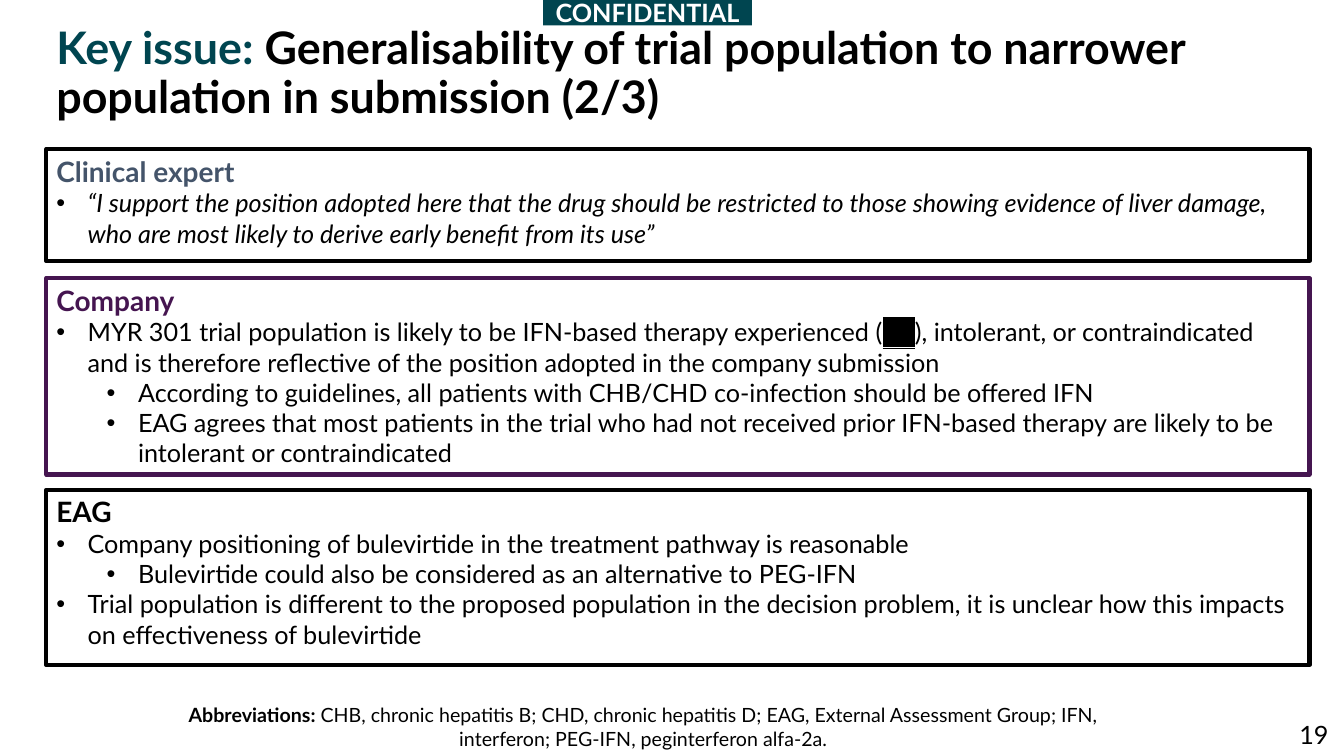
import pptx
import pptx.util
import pptx.dml.color
import pptx.enum.shapes
import pptx.enum.text
import pptx.oxml
import pptx.oxml.ns
from pptx.util import Cm, Pt

ALIGN = pptx.enum.text.PP_ALIGN
ANCHOR = pptx.enum.text.MSO_ANCHOR
FONT = "Lato"
BLACK, WHITE, TEAL, PURPLE, SLATE = "000000", "FFFFFF", "004550", "451550", "44546A"
LEFT, WIDTH = 1.17, 31.83
BULLET_INDENT, LEVEL_STEP = 0.79, 1.27


def colour(value):
    return pptx.dml.color.RGBColor.from_string(value)


def style(font, size, ink=BLACK, bold=False, italic=False):
    font.name = FONT
    font.size = Pt(size)
    font.bold = bold
    font.italic = italic
    font.color.rgb = colour(ink)


def add_text(slide, box):
    frame = slide.shapes.add_textbox(*map(Cm, box)).text_frame
    frame.word_wrap = True
    return frame


def add_rectangle(slide, box):
    rectangle = slide.shapes.add_shape(
        pptx.enum.shapes.MSO_SHAPE.RECTANGLE, *map(Cm, box))
    rectangle.shadow.inherit = False
    return rectangle


def add_bullet(paragraph, level):
    paragraph.level = level
    properties = paragraph._p.get_or_add_pPr()
    properties.set("marL", str(Cm(BULLET_INDENT + level * LEVEL_STEP)))
    properties.set("indent", str(-Cm(BULLET_INDENT)))
    for tag, attribute, value in (("buFont", "typeface", "Arial"),
                                  ("buChar", "char", "•")):
        element = pptx.oxml.parse_xml(
            f'<a:{tag} {pptx.oxml.ns.nsdecls("a")} {attribute}="{value}"/>')
        properties.append(element)


def redact(run):
    run.font.underline = True
    run.font.color.rgb = colour(BLACK)
    highlight = pptx.oxml.parse_xml(
        f'<a:highlight {pptx.oxml.ns.nsdecls("a")}>'
        f'<a:srgbClr val="{BLACK}"/></a:highlight>')
    fill = run._r.rPr.find(pptx.oxml.ns.qn("a:solidFill"))
    fill.addnext(highlight)


def title(slide, box, lead, rest):
    paragraph = add_text(slide, box).paragraphs[0]
    paragraph.line_spacing = 0.9
    for text, ink in ((lead, TEAL), (rest, BLACK)):
        run = paragraph.add_run()
        run.text = text
        style(run.font, 32, ink, bold=True)


def opinion_panel(slide, box, heading, ink, border, points, italic=False):
    panel = add_rectangle(slide, box)
    panel.fill.background()
    panel.line.color.rgb = colour(border)
    panel.line.width = Pt(3)
    frame = panel.text_frame
    frame.word_wrap = True
    frame.vertical_anchor = ANCHOR.TOP
    header = frame.paragraphs[0]
    header.alignment = ALIGN.LEFT
    header.text = heading
    style(header.font, 20, ink, bold=True)
    for level, text in points:
        point = frame.add_paragraph()
        point.alignment = ALIGN.LEFT
        add_bullet(point, level)
        style(point.font, 18, italic=italic)
        before, mask, after = text.partition("***")
        for part in filter(None, (before, mask, after)):
            run = point.add_run()
            run.text = part
            if part == mask:
                redact(run)


def abbreviations(slide, box, label, text):
    paragraph = add_text(slide, box).paragraphs[0]
    paragraph.alignment = ALIGN.CENTER
    for part, bold in ((label, True), (text, False)):
        run = paragraph.add_run()
        run.text = part
        style(run.font, 14, bold=bold)


def page_number(slide, box, number):
    paragraph = add_text(slide, box).paragraphs[0]
    paragraph.alignment = ALIGN.RIGHT
    paragraph.text = number
    style(paragraph.font, 18)


def confidential_tag(slide, box, text):
    tag = add_rectangle(slide, box)
    tag.fill.solid()
    tag.fill.fore_color.rgb = colour(TEAL)
    tag.line.fill.background()
    tag.text_frame.vertical_anchor = ANCHOR.MIDDLE
    paragraph = tag.text_frame.paragraphs[0]
    paragraph.alignment = ALIGN.CENTER
    paragraph.text = text
    style(paragraph.font, 18, WHITE, bold=True)


def main():
    deck = pptx.Presentation()
    deck.slide_width, deck.slide_height = Cm(33.87), Cm(19.05)
    slide = deck.slides.add_slide(deck.slide_layouts[6])

    page_number(slide, (29.06, 18.01, 4.67, 1.02), "19")
    title(slide, (LEFT, 0.53, 32.31, 2.84), "Key issue: ",
          "Generalisability of trial population to narrower population in submission (2/3)")
    opinion_panel(slide, (LEFT, 3.76, WIDTH, 2.82), "Clinical expert", SLATE, BLACK, [
        (0, "“I support the position adopted here that the drug should be restricted to those "
            "showing evidence of liver damage, who are most likely to derive early benefit "
            "from its use”"),
    ], italic=True)
    opinion_panel(slide, (LEFT, 7.01, WIDTH, 4.95), "Company", PURPLE, PURPLE, [
        (0, "MYR 301 trial population is likely to be IFN-based therapy experienced (***), "
            "intolerant, or contraindicated and is therefore reflective of the position "
            "adopted in the company submission"),
        (1, "According to guidelines, all patients with CHB/CHD co-infection should be "
            "offered IFN"),
        (1, "EAG agrees that most patients in the trial who had not received prior IFN-based "
            "therapy are likely to be intolerant or contraindicated"),
    ])
    opinion_panel(slide, (LEFT, 12.34, WIDTH, 4.42), "EAG", BLACK, BLACK, [
        (0, "Company positioning of bulevirtide in the treatment pathway is reasonable"),
        (1, "Bulevirtide could also be considered as an alternative to PEG-IFN"),
        (0, "Trial population is different to the proposed population in the decision "
            "problem, it is unclear how this impacts on effectiveness of bulevirtide"),
    ])
    abbreviations(slide, (3.58, 17.6, 25.27, 1.45), "Abbreviations: ",
                  "CHB, chronic hepatitis B; CHD, chronic hepatitis D; EAG, External "
                  "Assessment Group; IFN, interferon; PEG-IFN, peginterferon alfa-2a.")
    confidential_tag(slide, (13.69, 0, 5.26, 0.64), "CONFIDENTIAL")
    deck.save("out.pptx")


if __name__ == "__main__":
    main()
